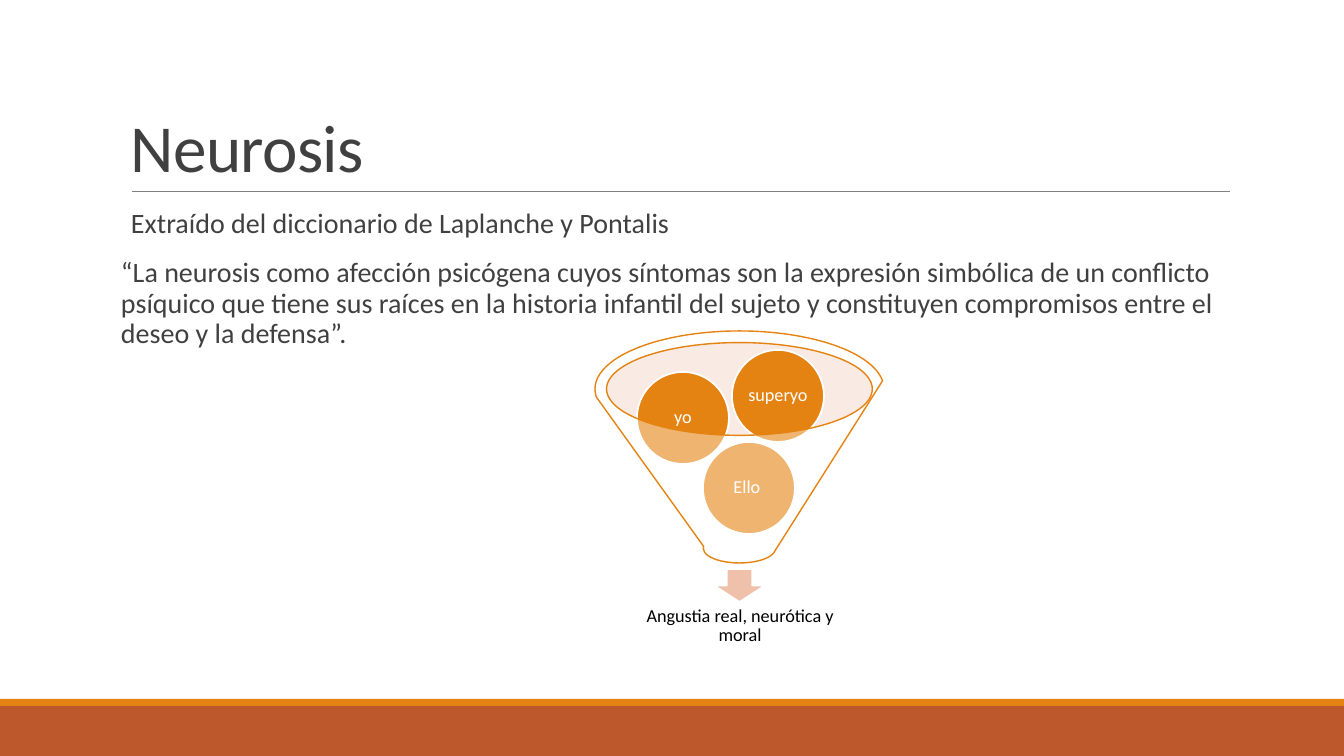
from dataclasses import dataclass

from lxml import etree
from pptx import Presentation
from pptx.dml.color import RGBColor
from pptx.enum.shapes import MSO_CONNECTOR, MSO_SHAPE
from pptx.enum.text import MSO_ANCHOR, PP_ALIGN
from pptx.oxml.ns import qn
from pptx.util import Pt

RECTANGLE, OVAL = MSO_SHAPE.RECTANGLE, MSO_SHAPE.OVAL
DOWN_ARROW, FUNNEL = MSO_SHAPE.DOWN_ARROW, MSO_SHAPE.FUNNEL
STRAIGHT = MSO_CONNECTOR.STRAIGHT
TOP, MIDDLE, BOTTOM = MSO_ANCHOR.TOP, MSO_ANCHOR.MIDDLE, MSO_ANCHOR.BOTTOM
LEFT, CENTER = PP_ALIGN.LEFT, PP_ALIGN.CENTER
SLIDE_WIDTH, SLIDE_HEIGHT = 1344, 756
SCALE = 12192000 / SLIDE_WIDTH


@dataclass(frozen=True)
class Theme:
    font: str = "Calibri"
    title_size: int = 48
    body_size: int = 20
    label_size: int = 13
    ink: str = "404040"
    black: str = "000000"
    white: str = "FFFFFF"
    rule: str = "808080"
    orange: str = "E48312"
    rust: str = "BD582C"
    rim: str = "F2CDBD"
    arrow: str = "EFC1AB"


THEME = Theme()


def px(length):
    return round(length * SCALE)


def rgb(color):
    return RGBColor.from_string(color)


def add_preset(slide, preset, box, fill, line=None, line_width=1.25, opacity=100):
    shape = slide.shapes.add_shape(preset, *map(px, box))
    shape.shadow.inherit = False
    shape.fill.solid()
    shape.fill.fore_color.rgb = rgb(fill)
    if opacity < 100:
        solid_color = shape.fill._xPr.find(qn("a:solidFill"))[0]
        etree.SubElement(solid_color, qn("a:alpha")).set("val", str(opacity * 1000))
    if line:
        shape.line.color.rgb = rgb(line)
        shape.line.width = Pt(line_width)
    else:
        shape.line.fill.background()
    return shape


def set_frame(frame, anchor, inset_x, inset_y, wrap=True):
    frame.word_wrap = wrap
    frame.vertical_anchor = anchor
    frame.margin_left = frame.margin_right = px(inset_x)
    frame.margin_top = frame.margin_bottom = px(inset_y)


def write(paragraph, text, size, color, align=LEFT, spacing=0.9):
    paragraph.text = text
    paragraph.alignment = align
    paragraph.line_spacing = spacing
    paragraph.font.name = THEME.font
    paragraph.font.size = Pt(size)
    paragraph.font.color.rgb = rgb(color)


def add_footer_bands(slide, box):
    left, top, width, height = box
    stripe = 7
    add_preset(slide, RECTANGLE, (left, top + stripe, width, height - stripe), THEME.rust)
    add_preset(slide, RECTANGLE, (left, top, width, stripe), THEME.orange)


def add_title(slide, box, title):
    left, top, width, height = box
    baseline = top + height
    rule = slide.shapes.add_connector(
        STRAIGHT, px(left + 11), px(baseline), px(left + width), px(baseline))
    rule.line.color.rgb = rgb(THEME.rule)
    rule.line.width = Pt(0.5)
    etree.SubElement(rule._element.spPr, qn("a:effectLst"))

    frame = slide.shapes.add_textbox(*map(px, box)).text_frame
    set_frame(frame, BOTTOM, 10, 5)
    heading = frame.paragraphs[0]
    write(heading, title, THEME.title_size, THEME.ink, spacing=0.85)
    heading._p.pPr.find(qn("a:defRPr")).set("spc", "-50")


def add_definition(slide, box, source, quotation):
    frame = slide.shapes.add_textbox(*map(px, box)).text_frame
    set_frame(frame, TOP, 0, 5)
    credit, definition = frame.paragraphs[0], frame.add_paragraph()
    for paragraph, text in ((credit, source), (definition, quotation)):
        write(paragraph, text, THEME.body_size, THEME.ink)
        paragraph.space_before = Pt(12)
        paragraph.space_after = Pt(2)
    credit._p.pPr.set("marL", str(px(10)))


def add_psyche_funnel(slide, box, agencies, outcome):
    left, top, width, height = box
    ball = 92
    add_preset(slide, OVAL, (left + 11, top + 11, 266, 93), THEME.rim, opacity=40)
    add_preset(slide, DOWN_ARROW, (left + 119, top + 238, 51, 33), THEME.arrow, THEME.white)

    caption_box = (left + 21, top + 264, 248, 62)
    caption = slide.shapes.add_textbox(*map(px, caption_box)).text_frame
    set_frame(caption, MIDDLE, 10, 10)
    write(caption.paragraphs[0], outcome, THEME.label_size, THEME.black, CENTER)

    for agency, x, y in agencies:
        circle = add_preset(
            slide, OVAL, (left + x, top + y, ball, ball), THEME.orange, THEME.white)
        set_frame(circle.text_frame, MIDDLE, 2, 2, wrap=False)
        write(circle.text_frame.paragraphs[0], agency, THEME.label_size, THEME.white, CENTER)

    add_preset(slide, FUNNEL, (left, top, width, height - 94), THEME.white,
               THEME.orange, line_width=1, opacity=40)


def main():
    presentation = Presentation()
    presentation.slide_width = px(SLIDE_WIDTH)
    presentation.slide_height = px(SLIDE_HEIGHT)
    slide = presentation.slides.add_slide(presentation.slide_layouts[6])

    add_footer_bands(slide, (0, 699, SLIDE_WIDTH, 57))
    add_title(slide, (121, 31, 1109, 160), "Neurosis")
    add_definition(
        slide, (121, 204, 1109, 444),
        "Extraído del diccionario de Laplanche y Pontalis",
        "“La neurosis como afección psicógena cuyos síntomas son la expresión simbólica "
        "de un conflicto psíquico que tiene sus raíces en la historia infantil del sujeto "
        "y constituyen compromisos entre el deseo y la defensa”.")
    add_psyche_funnel(
        slide, (595, 331, 289, 326),
        (("Ello ", 108, 111), ("yo", 42, 41), ("superyo", 137, 19)),
        "Angustia real, neurótica y moral")
    presentation.save("out.pptx")


if __name__ == "__main__":
    main()
